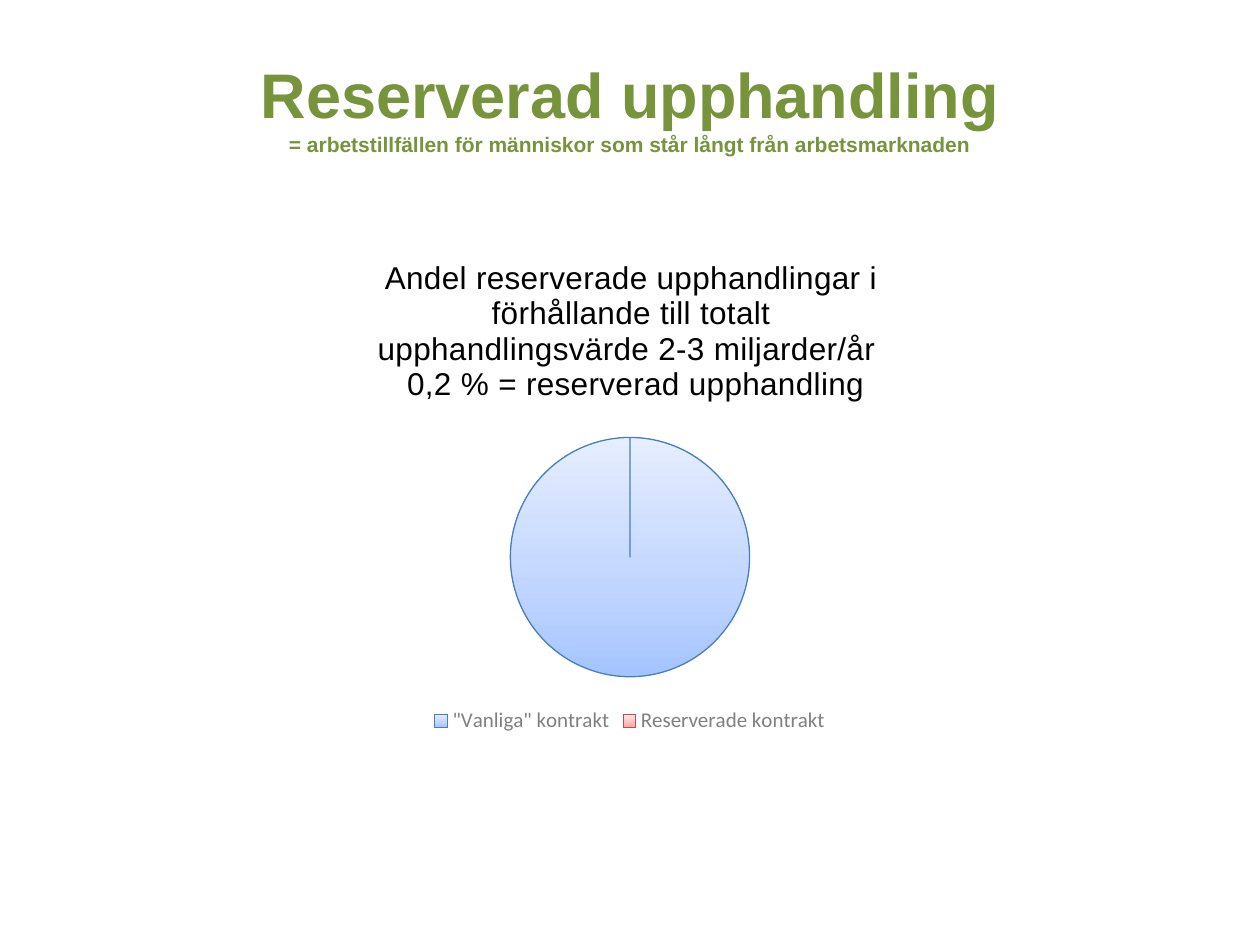
from copy import deepcopy

from lxml import etree
from pptx import Presentation
from pptx.chart.data import CategoryChartData
from pptx.dml.color import RGBColor
from pptx.enum import chart as charts, text
from pptx.oxml.ns import qn
from pptx.util import Pt

GREEN = RGBColor(0x77, 0x93, 0x3C)
BLACK = RGBColor(0, 0, 0)
GREY = RGBColor(0x80, 0x80, 0x80)
BLUE_LINE = RGBColor(0x4A, 0x7E, 0xBB)
RED_LINE = RGBColor(0xBE, 0x4B, 0x48)
BLUES = [RGBColor(0xA4, 0xC4, 0xFF), RGBColor(0xBF, 0xD4, 0xFF), RGBColor(0xE6, 0xEE, 0xFF)]
REDS = [RGBColor(0xFF, 0xA6, 0xA5), RGBColor(0xFF, 0xC0, 0xBF), RGBColor(0xFF, 0xE7, 0xE7)]
STOP_POSITIONS = [0, 0.35, 1]

presentation = Presentation()
presentation.slide_width, presentation.slide_height = Pt(720), Pt(540)
slide = presentation.slides.add_slide(presentation.slide_layouts[5])

# Title with a smaller second line
title = slide.shapes.title
title.left, title.top, title.width, title.height = Pt(36), Pt(33), Pt(648), Pt(55.5)
title.text_frame.text = ("Reserverad upphandling\v"
                         "= arbetstillfällen för människor som står långt från arbetsmarknaden")
title.text_frame.vertical_anchor = text.MSO_ANCHOR.MIDDLE
paragraph = title.text_frame.paragraphs[0]
paragraph.alignment = text.PP_ALIGN.CENTER
for run, size in zip(paragraph.runs, (36, 12)):
    run.font.name, run.font.size, run.font.bold = "Arial", Pt(size), True
    run.font.color.rgb = GREEN

# Pie chart
data = CategoryChartData()
data.categories = ['"Vanliga" kontrakt', "Reserverade kontrakt"]
data.add_series("Series 1", (100, 0))
chart = slide.shapes.add_chart(charts.XL_CHART_TYPE.PIE, Pt(167.4), Pt(139.7),
                               Pt(385.2), Pt(282.2), data).chart
chart.font.name, chart.font.size = "Calibri", Pt(10)
chart.font.color.rgb = BLACK

# Chart title, slightly letter-spaced
chart.has_title = True
chart.chart_title.include_in_layout = False
chart_title = chart.chart_title.text_frame
chart_title.text = ("Andel reserverade upphandlingar i förhållande till totalt "
                    "upphandlingsvärde 2-3 miljarder/år \n 0,2 % = reserverad upphandling")
for paragraph in chart_title.paragraphs:
    paragraph.alignment = text.PP_ALIGN.CENTER
    for font in (paragraph.font, paragraph.runs[0].font):
        font.name, font.size, font.bold = "Arial", Pt(18), False
        font.color.rgb = BLACK
        font._element.set("spc", "20")

# Chart title position, as fractions of the chart
title_element = chart.chart_title._element
for old_layout in title_element.findall(qn("c:layout")):
    title_element.remove(old_layout)
layout = etree.Element(qn("c:layout"))
title_element.find(qn("c:tx")).addnext(layout)
manual_layout = etree.SubElement(layout, qn("c:manualLayout"))
for tag, value in (("xMode", "edge"), ("yMode", "edge"), ("x", "0.12"), ("y", "0.02")):
    etree.SubElement(manual_layout, qn("c:" + tag), val=value)

# Legend
chart.has_legend = True
chart.legend.position = charts.XL_LEGEND_POSITION.BOTTOM
chart.legend.include_in_layout = False
chart.legend.font.name, chart.legend.font.size = "Calibri", Pt(12)
chart.legend.font.color.rgb = GREY

# Slightly separated slices with three-stop gradients
plot = chart.plots[0]
plot.vary_by_categories = True
series = plot.series[0]
explosion = etree.Element(qn("c:explosion"), val="2")
series._element.find(qn("c:cat")).addprevious(explosion)
for index, (colors, line_color) in enumerate(((BLUES, BLUE_LINE), (REDS, RED_LINE))):
    slice_format = series.points[index].format
    fill = slice_format.fill
    fill.gradient()
    fill.gradient_angle = 90
    first_stop = fill._xPr.find(".//" + qn("a:gs"))
    first_stop.addnext(deepcopy(first_stop))
    for stop, position, color in zip(fill.gradient_stops, STOP_POSITIONS, colors):
        stop.position = position
        stop.color.rgb = color
    slice_format.line.color.rgb = line_color
    slice_format.line.width = Pt(0.75)

presentation.save("out.pptx")
